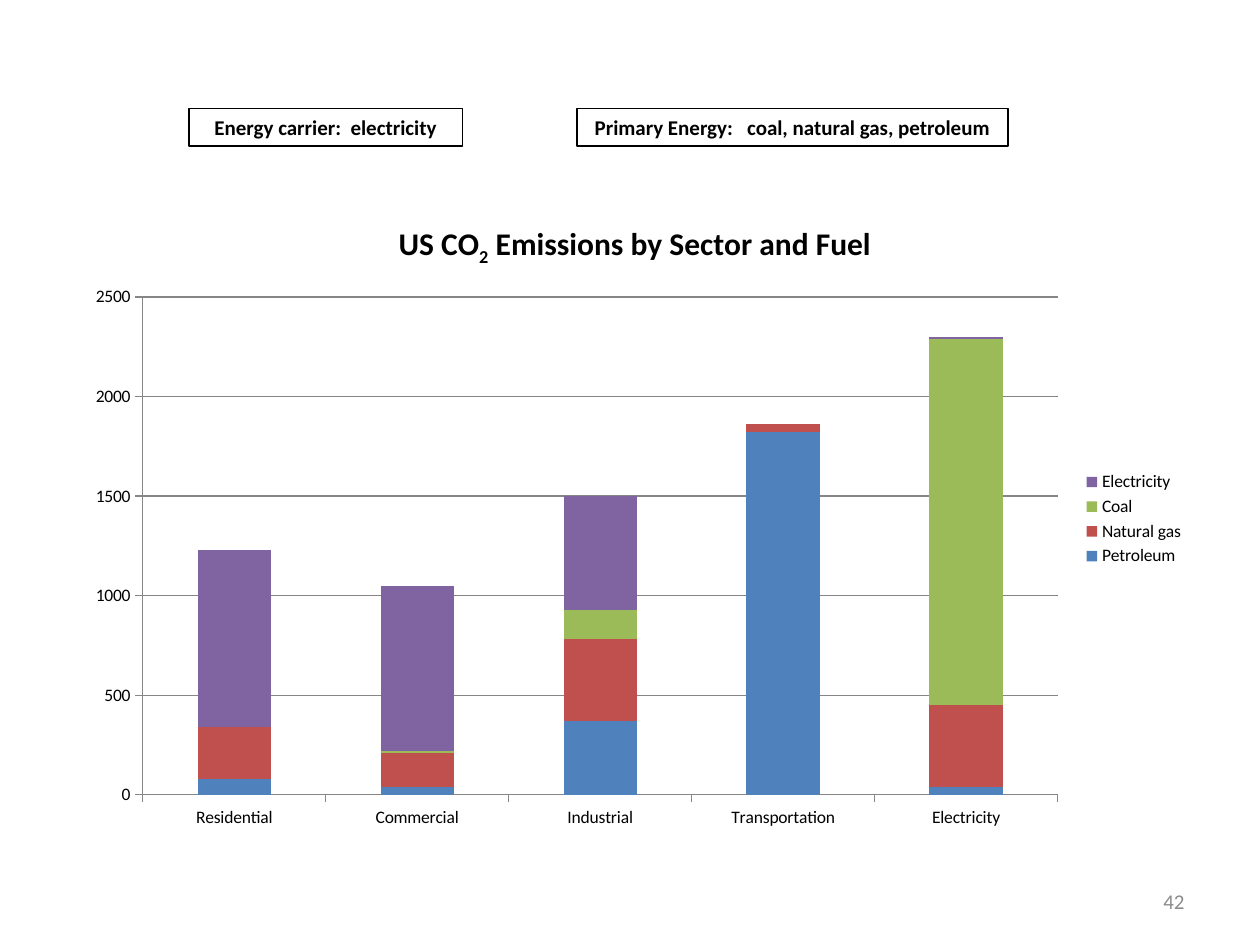
from dataclasses import dataclass

from lxml import etree
from pptx import Presentation
from pptx.chart.data import CategoryChartData
from pptx.dml.color import RGBColor
from pptx.enum.chart import XL_CHART_TYPE, XL_LEGEND_POSITION, XL_TICK_MARK
from pptx.enum.shapes import MSO_SHAPE
from pptx.enum.text import MSO_ANCHOR, PP_ALIGN
from pptx.oxml.ns import qn
from pptx.util import Inches, Pt

STACKED = XL_CHART_TYPE.COLUMN_STACKED
RIGHT_KEY = XL_LEGEND_POSITION.RIGHT
OUTSIDE = XL_TICK_MARK.OUTSIDE
RECT = MSO_SHAPE.RECTANGLE
MIDDLE = MSO_ANCHOR.MIDDLE
CENTER, RIGHT = PP_ALIGN.CENTER, PP_ALIGN.RIGHT


@dataclass(frozen=True)
class Theme:
    face: str = "Calibri"
    ink: RGBColor = RGBColor.from_string("000000")
    grey: RGBColor = RGBColor.from_string("8C8C8C")
    rule: RGBColor = RGBColor.from_string("868686")
    title: Pt = Pt(18)
    label: Pt = Pt(12)
    small: Pt = Pt(10)
    line: Pt = Pt(0.75)


THEME = Theme()
SECTORS = ["Residential", "Commercial", "Industrial", "Transportation", "Electricity"]
FUELS = [
    ("Petroleum", "4F81BD", (80, 40, 370, 1820, 40)),
    ("Natural gas", "C0504D", (260, 170, 410, 40, 410)),
    ("Coal", "9BBB59", (0, 10, 150, 0, 1840)),
    ("Electricity", "8064A2", (890, 830, 570, 0, 10)),
]
LABELS = [
    ("Energy carrier:  electricity", (1.5, 0.86, 2.17, 0.3)),
    ("Primary Energy:   coal, natural gas, petroleum", (4.58, 0.86, 3.42, 0.3)),
]
PLOT = {"x": 0.062, "y": 0.153, "w": 0.814, "h": 0.778}


def apply(item, values):
    for name, value in values.items():
        setattr(item, name, value)


def style(font, size, color=THEME.ink, bold=False):
    apply(font, {"name": THEME.face, "size": size, "bold": bold})
    font.color.rgb = color


def write(shape, text, align, color=THEME.ink, bold=False):
    frame = shape.text_frame
    apply(frame, {"word_wrap": True, "vertical_anchor": MIDDLE})
    para = frame.paragraphs[0]
    para.alignment = align
    run = para.add_run()
    run.text = text
    style(run.font, THEME.label, color, bold)


def add_label(slide, box, text):
    shape = slide.shapes.add_shape(RECT, *map(Inches, box))
    shape.shadow.inherit = False
    shape.fill.background()
    shape.line.color.rgb = THEME.ink
    shape.line.width = THEME.line
    write(shape, text, CENTER, bold=True)


def add_number(slide, box, text):
    write(slide.shapes.add_textbox(*map(Inches, box)), text, RIGHT, THEME.grey)


def set_title(chart):
    para = chart.chart_title.text_frame.paragraphs[0]
    for text, lower in (("US CO", False), ("2", True),
                        (" Emissions by Sector and Fuel", False)):
        run = para.add_run()
        run.text = text
        style(run.font, THEME.title, bold=True)
        if lower:
            run.font._element.set("baseline", "-25000")
    chart.chart_title.include_in_layout = False


def set_plot(chart):
    # Fix the inner plot area as shares of the chart frame
    area = chart._chartSpace.chart.plotArea
    for old in area.findall(qn("c:layout")):
        area.remove(old)
    layout = etree.Element(qn("c:layout"))
    manual = etree.SubElement(layout, qn("c:manualLayout"))
    values = {"layoutTarget": "inner", "xMode": "edge", "yMode": "edge", **PLOT}
    for tag, value in values.items():
        etree.SubElement(manual, qn(f"c:{tag}")).set("val", str(value))
    area.insert(0, layout)


def add_emissions(slide, box):
    data = CategoryChartData(number_format="0")
    data.categories = SECTORS
    for name, _, values in FUELS:
        data.add_series(name, values)
    chart = slide.shapes.add_chart(STACKED, *map(Inches, box), data).chart
    style(chart.font, THEME.small)
    set_title(chart)
    set_plot(chart)

    # Columns
    plot = chart.plots[0]
    apply(plot, {"gap_width": 150, "overlap": 100, "vary_by_categories": False})
    for series, (_, color, _) in zip(plot.series, FUELS):
        series.format.fill.solid()
        series.format.fill.fore_color.rgb = RGBColor.from_string(color)

    # Axes and grid
    scale = chart.value_axis
    apply(scale, {"minimum_scale": 0, "maximum_scale": 2500, "major_unit": 500,
                  "has_major_gridlines": True})
    apply(scale.tick_labels, {"number_format": "0", "number_format_is_linked": False})
    for axis in (scale, chart.category_axis):
        axis.major_tick_mark = OUTSIDE
    for part in (scale, chart.category_axis, scale.major_gridlines):
        part.format.line.color.rgb = THEME.rule
        part.format.line.width = THEME.line

    # Legend
    chart.has_legend = True
    apply(chart.legend, {"position": RIGHT_KEY, "include_in_layout": False})
    style(chart.legend.font, THEME.small)


def main():
    deck = Presentation()
    apply(deck, {"slide_width": Inches(10), "slide_height": Inches(7.5)})
    slide = deck.slides.add_slide(deck.slide_layouts[6])
    add_emissions(slide, (0.58, 1.58, 8.92, 5.08))
    add_number(slide, (7.17, 6.95, 2.33, 0.4), "42")
    for text, box in LABELS:
        add_label(slide, box, text)
    deck.save("out.pptx")


if __name__ == "__main__":
    main()
